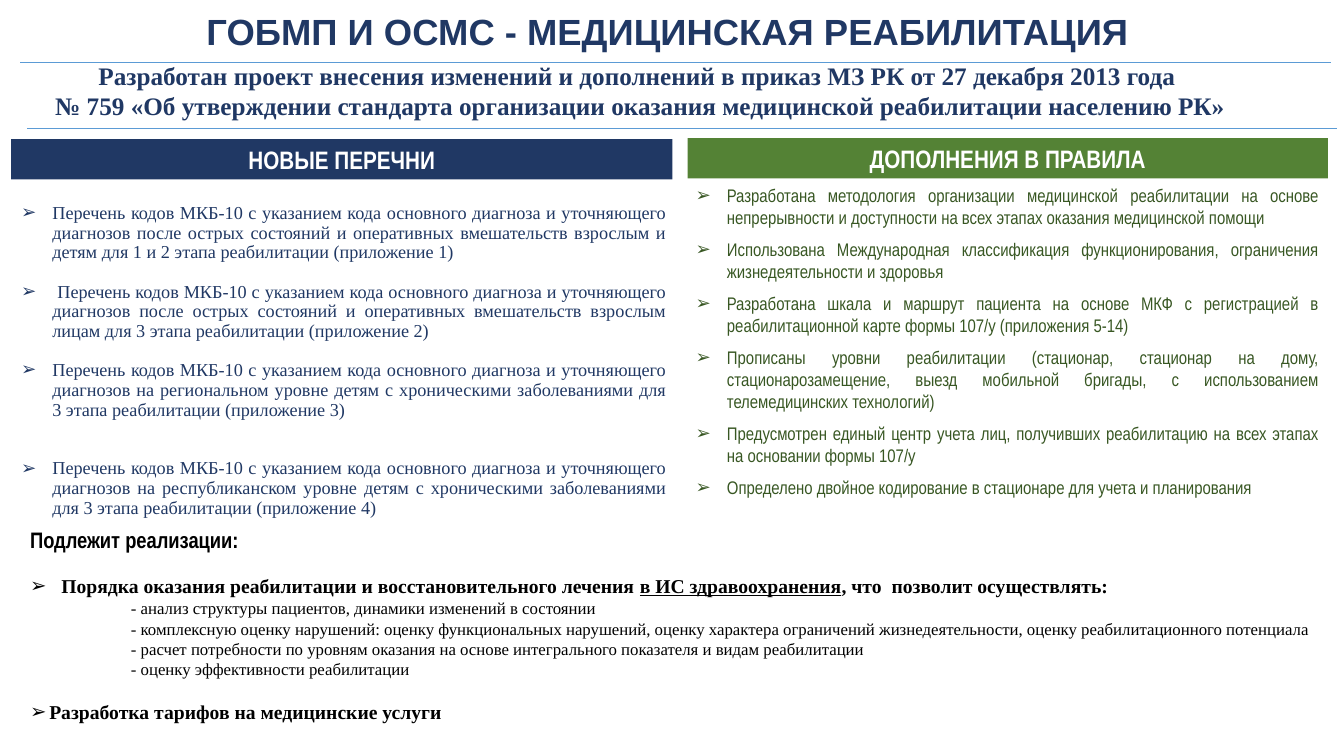
from dataclasses import dataclass

from lxml.etree import SubElement
from pptx import Presentation
from pptx.dml.color import RGBColor
from pptx.enum.shapes import MSO_CONNECTOR, MSO_SHAPE
from pptx.enum.text import MSO_ANCHOR, MSO_AUTO_SIZE, PP_ALIGN
from pptx.oxml.ns import qn
from pptx.util import Inches, Pt


@dataclass(frozen=True)
class Theme:
    navy: str = "203864"
    green: str = "548235"
    dark_green: str = "385723"
    rule: str = "5B9BD5"
    black: str = "000000"
    white: str = "FFFFFF"
    serif: str = "Times New Roman"
    narrow: str = "Arial Narrow"
    sans: str = "Arial"
    title: int = 26
    heading: int = 18
    label: int = 16
    task: int = 14
    item: int = 13
    detail: int = 12


theme = Theme()


def style(paragraph, font, size, color, bold=False, align=PP_ALIGN.JUSTIFY, after=0):
    paragraph.alignment = align
    paragraph.space_before = Pt(0)
    paragraph.space_after = Pt(after)
    paragraph.font.name = font
    paragraph.font.size = Pt(size)
    paragraph.font.bold = bold
    paragraph.font.color.rgb = RGBColor.from_string(color)


def indent(paragraph, left, bullet=True):
    properties = paragraph._p.get_or_add_pPr()
    properties.set("marL", str(Inches(left)))
    properties.set("indent", str(-Inches(left) if bullet else 0))
    if bullet:
        SubElement(properties, qn("a:buFont"), typeface=theme.sans)
        SubElement(properties, qn("a:buChar"), char="➢")


presentation = Presentation()
presentation.slide_width = Inches(13.33)
presentation.slide_height = Inches(7.5)
slide = presentation.slides.add_slide(presentation.slide_layouts[3])
title, new_lists, rule_additions = slide.placeholders

# Title
title.left, title.top = Inches(-0.04), Inches(0.1)
title.width, title.height = Inches(13.33), Inches(0.47)
title.text_frame.text = "ГОБМП И ОСМС - МЕДИЦИНСКАЯ РЕАБИЛИТАЦИЯ"
title.text_frame.auto_size = MSO_AUTO_SIZE.NONE
title.text_frame.vertical_anchor = MSO_ANCHOR.MIDDLE
title_line = title.text_frame.paragraphs[0]
title_line.line_spacing = 0.9
style(title_line, theme.sans, theme.title, theme.navy, True, PP_ALIGN.CENTER)

# Rules above and below the subtitle
for left, right, top in ((0.2, 13.2, 0.62), (0.27, 13.26, 1.27)):
    rule = slide.shapes.add_connector(
        MSO_CONNECTOR.STRAIGHT, Inches(left), Inches(top), Inches(right), Inches(top))
    rule.line.color.rgb = RGBColor.from_string(theme.rule)
    rule.line.width = Pt(0.5)
    SubElement(rule._element.spPr, qn("a:effectLst"))

# Subtitle
subtitle = slide.shapes.add_textbox(Inches(0.2), Inches(0.55), Inches(12.3), Inches(0.71))
subtitle.text_frame.word_wrap = True
subtitle.text_frame.text = (
    "Разработан проект внесения изменений и дополнений в приказ МЗ РК от 27 декабря 2013 года \v"
    "№ 759 «Об утверждении стандарта организации оказания медицинской реабилитации населению РК»")
style(subtitle.text_frame.paragraphs[0], theme.serif, theme.heading, theme.navy,
      True, PP_ALIGN.CENTER)

# Column headings
for text, left, top, width, color in (
    ("НОВЫЕ ПЕРЕЧНИ", 0.11, 1.38, 6.56, theme.navy),
    ("ДОПОЛНЕНИЯ В ПРАВИЛА", 6.82, 1.37, 6.35, theme.green),
):
    heading = slide.shapes.add_shape(
        MSO_SHAPE.RECTANGLE, Inches(left), Inches(top), Inches(width), Inches(0.4))
    heading.shadow.inherit = False
    heading.fill.solid()
    heading.fill.fore_color.rgb = RGBColor.from_string(color)
    heading.line.fill.background()
    heading.text_frame.text = text
    style(heading.text_frame.paragraphs[0], theme.narrow, theme.heading, theme.white,
          True, PP_ALIGN.CENTER)

# Column lists: each item with the gap after it, in points
list_items = (
    ("Перечень кодов МКБ-10 с указанием кода основного диагноза и уточняющего диагнозов после "
     "острых состояний и оперативных вмешательств взрослым и детям для 1 и 2 этапа реабилитации "
     "(приложение 1)", 14),
    (" Перечень кодов МКБ-10 с указанием кода основного диагноза и уточняющего диагнозов после "
     "острых состояний и оперативных вмешательств взрослым лицам для 3 этапа реабилитации "
     "(приложение 2)", 14),
    ("Перечень кодов МКБ-10 с указанием кода основного диагноза и уточняющего диагнозов на "
     "региональном уровне детям с хроническими заболеваниями для 3 этапа реабилитации "
     "(приложение 3)", 28),
    ("Перечень кодов МКБ-10 с указанием кода основного диагноза и уточняющего диагнозов на "
     "республиканском уровне детям с хроническими заболеваниями для 3 этапа реабилитации "
     "(приложение 4)", 0),
)
addition_items = [(text, 7.4) for text in (
    "Разработана методология организации медицинской реабилитации на основе непрерывности и "
    "доступности на всех этапах оказания медицинской помощи",
    "Использована Международная классификация функционирования, ограничения жизнедеятельности "
    "и здоровья",
    "Разработана шкала и маршрут пациента на основе МКФ с регистрацией в реабилитационной карте "
    "формы 107/у (приложения 5-14)",
    "Прописаны уровни реабилитации (стационар, стационар на дому, стационарозамещение, выезд "
    "мобильной бригады, с использованием телемедицинских технологий)",
    "Предусмотрен единый центр учета лиц, получивших реабилитацию на всех этапах на основании "
    "формы 107/у",
    "Определено двойное кодирование в стационаре для учета и планирования",
)]
for body, box, items, font, color, spacing, margin in (
    (new_lists, (0.11, 2.02, 6.59, 3.29), list_items, theme.serif, theme.navy, 0.9, 0),
    (rule_additions, (6.8, 1.78, 6.37, 3.57), addition_items, theme.narrow,
     theme.dark_green, 1.0, 0.05),
):
    body.left, body.top, body.width, body.height = map(Inches, box)
    frame = body.text_frame
    frame.auto_size = MSO_AUTO_SIZE.NONE
    frame.vertical_anchor = MSO_ANCHOR.TOP
    frame.margin_top = Inches(margin)
    frame.text = "\n".join(text for text, gap in items)
    for paragraph, (text, gap) in zip(frame.paragraphs, items):
        indent(paragraph, 0.31)
        paragraph.line_spacing = spacing
        style(paragraph, font, theme.item, color, after=gap)

# Tasks to implement
tasks = slide.shapes.add_textbox(Inches(0.2), Inches(5.17), Inches(12.99), Inches(2.05))
frame = tasks.text_frame
frame.word_wrap = True
label = frame.paragraphs[0]
label.text = "Подлежит реализации:"
style(label, theme.narrow, theme.label, theme.black, True, after=15)

procedure = frame.add_paragraph()
for text, underlined in (
    ("Порядка оказания реабилитации и восстановительного лечения ", False),
    ("в ИС здравоохранения", True),
    (", что  позволит осуществлять:", False),
):
    run = procedure.add_run()
    run.text = text
    run.font.underline = underlined
indent(procedure, 0.31)
style(procedure, theme.serif, theme.task, theme.black, True)

for text in (
    "- анализ структуры пациентов, динамики изменений в состоянии",
    "- комплексную оценку нарушений: оценку функциональных нарушений, оценку характера "
    "ограничений жизнедеятельности, оценку реабилитационного потенциала",
    "- расчет потребности по уровням оказания на основе интегрального показателя и видам "
    "реабилитации",
    "- оценку эффективности реабилитации",
):
    detail = frame.add_paragraph()
    detail.text = text
    indent(detail, 1, bullet=False)
    detail.line_spacing = Pt(14.6)
    style(detail, theme.serif, theme.detail, theme.black)

tariffs = frame.add_paragraph()
tariffs.text = "Разработка тарифов на медицинские услуги"
indent(tariffs, 0.19)
style(tariffs, theme.serif, theme.task, theme.black, True)
tariffs.space_before = Pt(14.6)

presentation.save("out.pptx")
